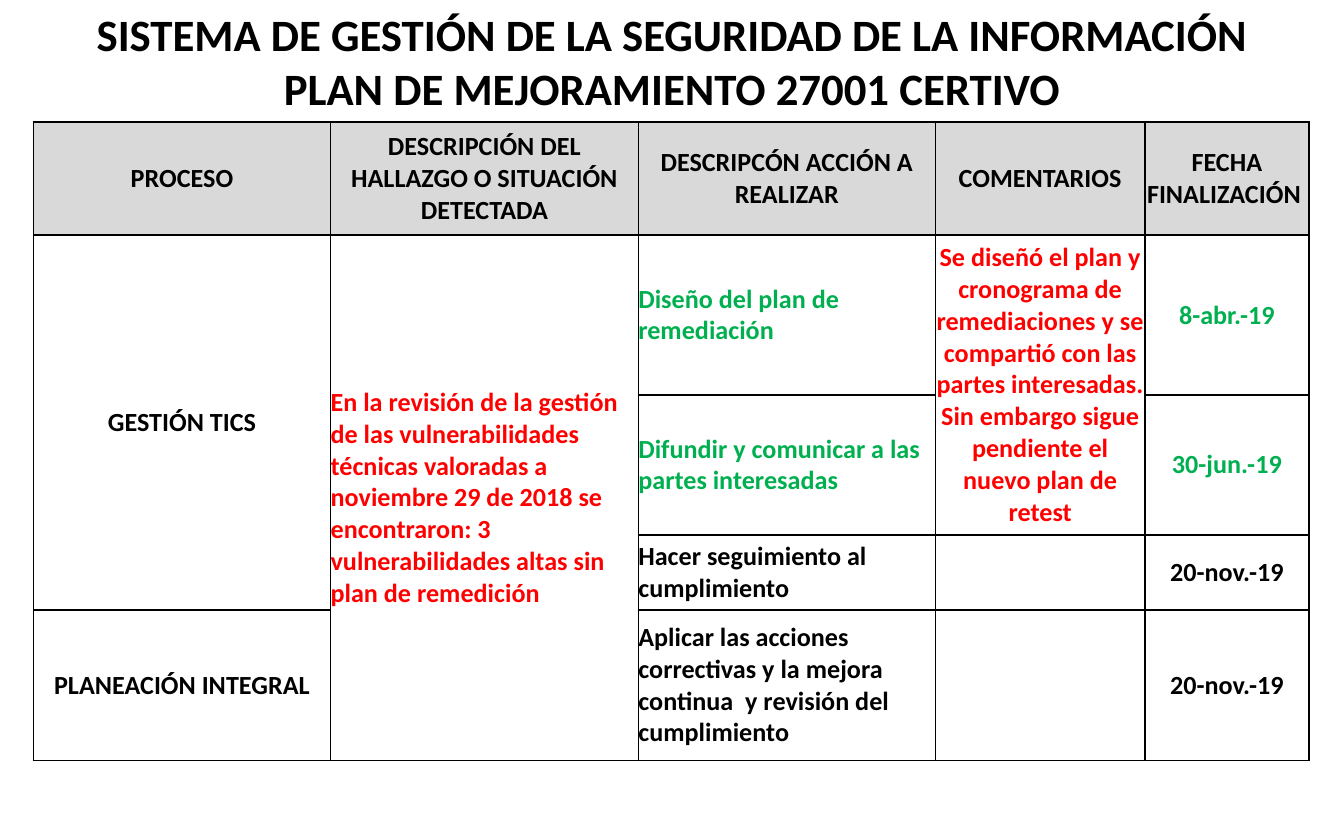
from lxml import etree
from pptx import Presentation
from pptx import util as u
from pptx.dml import color
from pptx.enum import text
from pptx.oxml import ns

COLORS = {"black": "000000", "red": "FF0000", "green": "00B050",
          "header": "D9D9D9", "white": "FFFFFF"}


def format_paragraph(paragraph, size, color_name, alignment):
    paragraph.alignment = alignment
    for run in paragraph.runs:
        run.font.name = "Calibri"
        run.font.size = u.Pt(size)
        run.font.bold = True
        run.font.color.rgb = color.RGBColor.from_string(COLORS[color_name])


def add_borders(cell):
    properties = cell._tc.get_or_add_tcPr()
    for side in ("lnL", "lnR", "lnT", "lnB"):
        line = etree.SubElement(properties, ns.qn("a:" + side), w=str(u.Pt(1)))
        fill = etree.SubElement(line, ns.qn("a:solidFill"))
        etree.SubElement(fill, ns.qn("a:srgbClr"), val=COLORS["black"])


presentation = Presentation()
presentation.slide_width = u.Inches(10)
presentation.slide_height = u.Inches(6.25)
slide = presentation.slides.add_slide(presentation.slide_layouts[6])

# Improvement plan table
column_widths = [2.21, 2.29, 2.21, 1.56, 1.22]
row_heights = [0.84, 1.19, 1.04, 0.56, 1.12]
headers = ["PROCESO", "DESCRIPCIÓN DEL HALLAZGO O SITUACIÓN DETECTADA",
           "DESCRIPCÓN ACCIÓN A REALIZAR", "COMENTARIOS", "FECHA FINALIZACIÓN "]
finding = ("En la revisión de la gestión de las vulnerabilidades técnicas valoradas a "
           "noviembre 29 de 2018 se encontraron: 3 vulnerabilidades altas sin plan de remedición")
comment = ("Se diseñó el plan y cronograma de remediaciones y se compartió con las partes "
           "interesadas. Sin embargo sigue pendiente el nuevo plan de retest")
rows = [
    headers,
    ["GESTIÓN TICS", finding, "Diseño del plan de remediación", comment, "8-abr.-19"],
    ["", "", "Difundir y comunicar a las partes interesadas", "", "30-jun.-19"],
    ["", "", "Hacer seguimiento al cumplimiento", "", "20-nov.-19"],
    ["PLANEACIÓN INTEGRAL", "",
     "Aplicar las acciones correctivas y la mejora continua  y revisión del cumplimiento",
     "", "20-nov.-19"],
]
left_aligned_columns = (1, 2)
text_colors = {(1, 1): "red", (1, 3): "red"}
for done_row in (1, 2):
    text_colors[done_row, 2] = text_colors[done_row, 4] = "green"

table = slide.shapes.add_table(
    len(rows), len(headers), u.Inches(0.25), u.Inches(0.91),
    u.Inches(sum(column_widths)), u.Inches(sum(row_heights))).table
for column, width in zip(table.columns, column_widths):
    column.width = u.Inches(width)
for row, height in zip(table.rows, row_heights):
    row.height = u.Inches(height)

for r, values in enumerate(rows):
    for c, value in enumerate(values):
        cell = table.cell(r, c)
        cell.margin_left = cell.margin_right = cell.margin_top = cell.margin_bottom = 0
        cell.vertical_anchor = text.MSO_ANCHOR.MIDDLE
        add_borders(cell)
        cell.fill.solid()
        cell.fill.fore_color.rgb = color.RGBColor.from_string(
            COLORS["white" if r else "header"])
        cell.text_frame.text = value
        left = r > 0 and c in left_aligned_columns
        format_paragraph(cell.text_frame.paragraphs[0], 14,
                         text_colors.get((r, c), "black"),
                         text.PP_ALIGN.LEFT if left else text.PP_ALIGN.CENTER)

# Cells shared by several rows: column, first row, last row
for c, first, last in [(0, 1, 3), (1, 1, 4), (3, 1, 2)]:
    table.cell(first, c).merge(table.cell(last, c))

# Title
title = slide.shapes.add_textbox(u.Inches(0.58), 0, u.Inches(8.84), u.Inches(0.91))
title.text_frame.word_wrap = False
title.text_frame.auto_size = text.MSO_AUTO_SIZE.SHAPE_TO_FIT_TEXT
title.text_frame.text = ("SISTEMA DE GESTIÓN DE LA SEGURIDAD DE LA INFORMACIÓN\n"
                         "PLAN DE MEJORAMIENTO 27001 CERTIVO")
for paragraph in title.text_frame.paragraphs:
    format_paragraph(paragraph, 24, "black", text.PP_ALIGN.CENTER)

presentation.save("out.pptx")
